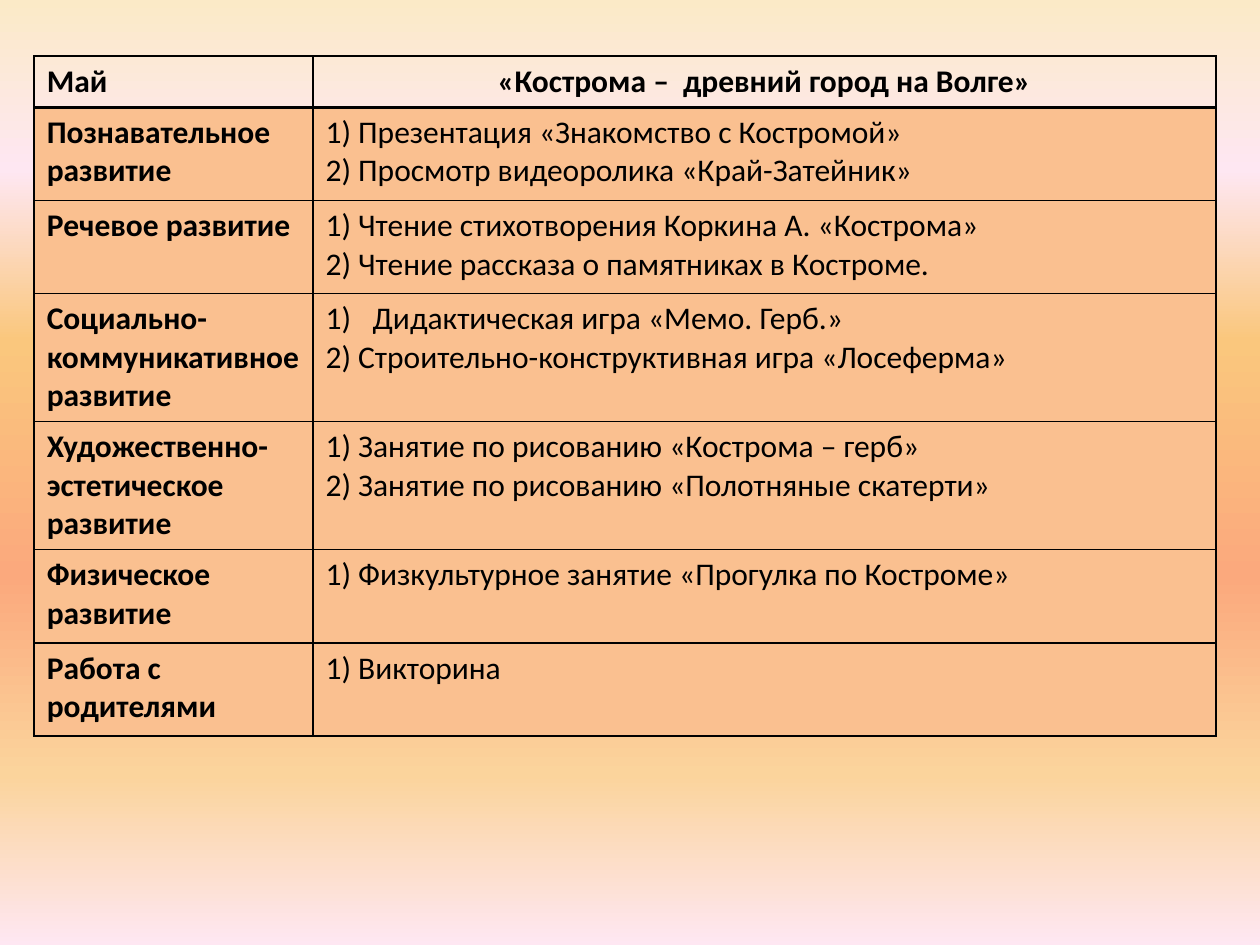
from lxml.etree import SubElement as Sub
from pptx import Presentation
from pptx.dml.color import RGBColor as RGB
from pptx.enum.text import PP_ALIGN as Align
from pptx.oxml import parse_xml
from pptx.oxml.ns import nsdecls, qn
from pptx.util import Cm, Pt

# Content: area of work, then its activities
HEAD = ("Май", ["«Кострома –  древний город на Волге»"])
ROWS = [
    ("Познавательное развитие",
     ["1) Презентация «Знакомство с Костромой»",
      "2) Просмотр видеоролика «Край-Затейник»"]),
    ("Речевое развитие",
     ["1) Чтение стихотворения Коркина А. «Кострома»",
      "2) Чтение рассказа о памятниках в Костроме."]),
    ("Социально-коммуникативное развитие",
     ["Дидактическая игра «Мемо. Герб.»",
      "2) Строительно-конструктивная игра «Лосеферма»"]),
    ("Художественно-эстетическое развитие",
     ["1) Занятие по рисованию «Кострома – герб»",
      "2) Занятие по рисованию «Полотняные скатерти»"]),
    ("Физическое развитие",
     ["1) Физкультурное занятие «Прогулка по Костроме»"]),
    ("Работа с родителями", ["1) Викторина"]),
]
GAME = 3  # table row with a hanging indent and an automatic number

THEME = {
    "font": {"name": "Calibri", "size": Pt(18)},
    "ink": "000000",
    "fill": "FAC090",
    "thin": 1,
    "thick": 2,
    "sky": [(0, "FBEAC7"), (18, "FEE7F2"), (36, "FAC77D"),
            (61, "FBA97D"), (82, "FBD49C"), (100, "FEE7F2")],
}
LEFT, TOP, HIGH = Cm(0.69), Cm(1.13), Cm(13.64)
COLS = (Cm(5.62), Cm(18.2))
TALLS = [Cm(1.02)] + [Cm(1.88)] * len(ROWS)
HANG = Cm(0.95)


def paint(slide):
    """Fill the background with a top-to-bottom gradient."""
    stops = "".join(f'<a:gs pos="{pos * 1000}"><a:srgbClr val="{hue}"/></a:gs>'
                    for pos, hue in THEME["sky"])
    slide.background.fill.solid()
    old = slide.background.fill._xPr.find(qn("a:solidFill"))
    old.getparent().replace(old, parse_xml(
        f'<a:gradFill {nsdecls("a")} rotWithShape="1"><a:gsLst>{stops}</a:gsLst>'
        '<a:lin ang="5400000" scaled="0"/></a:gradFill>'))


def frame(cell, edges):
    """Draw the cell borders; edges maps a side to its width in points."""
    props = cell._tc.get_or_add_tcPr()
    for spot, side in enumerate("LRTB"):
        props.insert(spot, parse_xml(
            f'<a:ln{side} {nsdecls("a")} w="{Pt(edges[side])}"><a:solidFill>'
            f'<a:srgbClr val="{THEME["ink"]}"/></a:solidFill></a:ln{side}>'))


def write(cell, lines, bold, align):
    box = cell.text_frame
    box.text = "\n".join(lines)
    for para in box.paragraphs:
        para.alignment = align
        font = para.runs[0].font
        for key, val in {**THEME["font"], "bold": bold}.items():
            setattr(font, key, val)
        font.color.rgb = RGB.from_string(THEME["ink"])


def hang(box):
    """Indent the list and number its first line."""
    for para in box.paragraphs:
        props = para._p.get_or_add_pPr()
        props.set("marL", str(HANG))
        props.set("indent", str(-HANG))
    first = box.paragraphs[0]._p.get_or_add_pPr()
    Sub(first, qn("a:buAutoNum"), type="arabicParenR")


def main():
    deck = Presentation()
    deck.slide_width, deck.slide_height = Cm(25.4), Cm(19.05)
    slide = deck.slides.add_slide(deck.slide_layouts[6])
    paint(slide)

    # Table grid
    data = [HEAD] + ROWS
    shape = slide.shapes.add_table(len(data), len(COLS), LEFT, TOP, sum(COLS), HIGH)
    table = shape.table
    table.first_row = table.horz_banding = False
    for col, wide in zip(table.columns, COLS):
        col.width = wide
    for row, tall in zip(table.rows, TALLS):
        row.height = tall
    shape.height = HIGH

    # Cells
    for i, (area, acts) in enumerate(data):
        edges = dict.fromkeys("LRTB", THEME["thin"])
        if i < 2:
            edges["BT"[i]] = THEME["thick"]
        for j, lines in enumerate(([area], acts)):
            cell = table.cell(i, j)
            write(cell, lines, i == 0 or j == 0,
                  Align.CENTER if i == 0 and j else Align.LEFT)
            if i:
                cell.fill.solid()
                cell.fill.fore_color.rgb = RGB.from_string(THEME["fill"])
            else:
                cell.fill.background()
            frame(cell, edges)
    hang(table.cell(GAME, 1).text_frame)

    deck.save("out.pptx")


if __name__ == "__main__":
    main()
